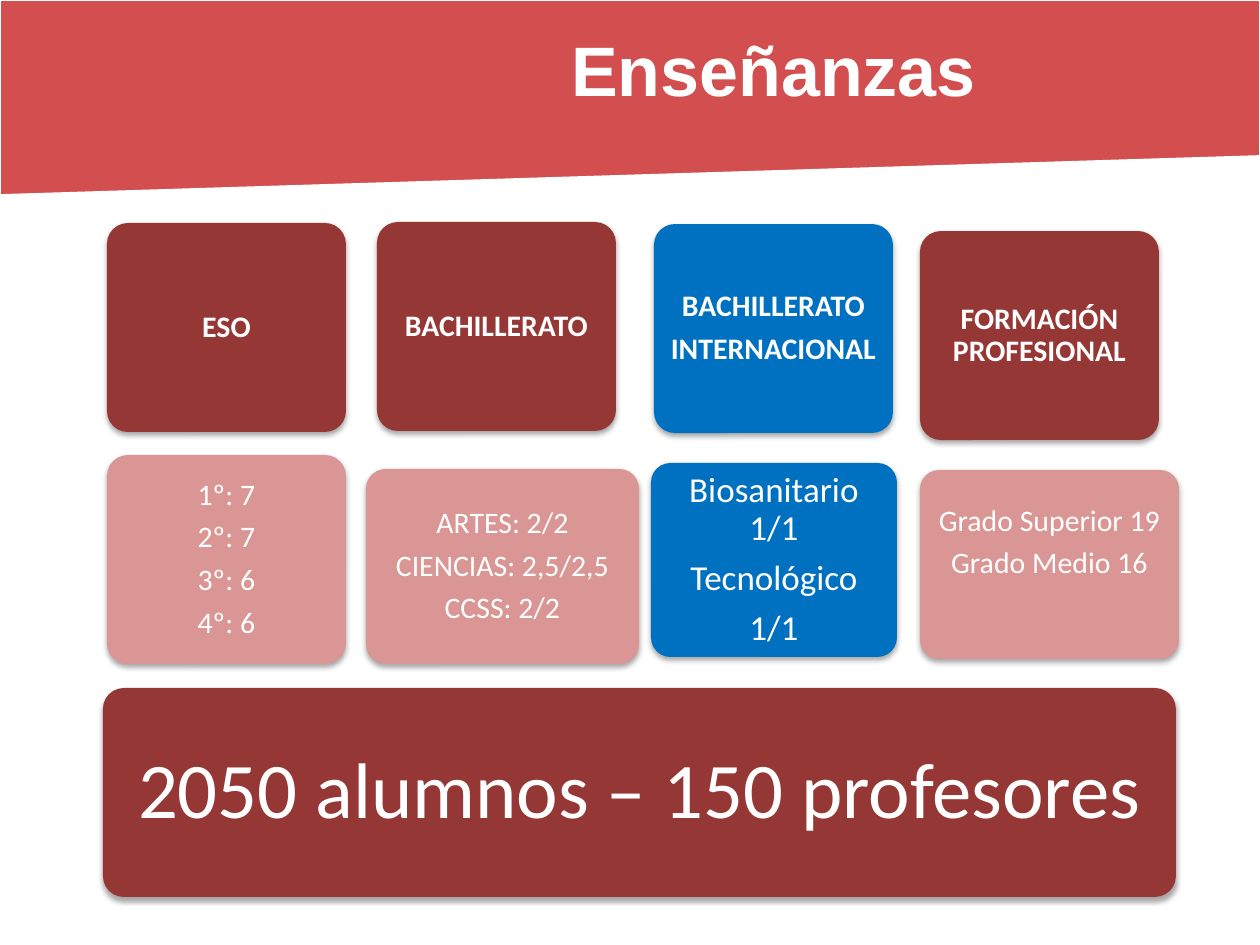
from lxml.etree import SubElement
from pptx import Presentation
from pptx.dml.color import RGBColor
from pptx.enum.shapes import MSO_SHAPE
from pptx.enum.text import MSO_ANCHOR, PP_ALIGN
from pptx.oxml.ns import qn
from pptx.util import Emu, Pt

SCALE = 914400 / 126
WHITE, DARK, PINK, BLUE = "FFFFFF", "953735", "D99694", "0070C0"


def px(n):
    return Emu(round(n * SCALE))


def paint(fill, color, alpha=None):
    fill.solid()
    fill.fore_color.rgb = RGBColor.from_string(color)


def fade(node, percent):
    SubElement(node, qn("a:alpha"), val=str(percent * 1000))


def shade(shape):
    shape.shadow.inherit = False
    effects = shape._element.spPr.find(qn("a:effectLst"))
    outer = SubElement(effects, qn("a:outerShdw"), blurRad="40000",
                       dist="23000", dir="5400000", rotWithShape="0")
    fade(SubElement(outer, qn("a:srgbClr"), val="000000"), 35)


def write(shape, lines, size, font, bold, pad, foot=0):
    frame = shape.text_frame
    frame.word_wrap = True
    frame.vertical_anchor = MSO_ANCHOR.MIDDLE
    frame.margin_left = frame.margin_right = frame.margin_top = px(pad)
    frame.margin_bottom = px(pad + foot)
    frame.text = "\n".join(lines)
    for para in frame.paragraphs:
        para.alignment = PP_ALIGN.CENTER
        para.line_spacing = 0.9
        para.space_after = Pt(round(size * 0.35))
        for run in para.runs:
            run.font.size = Pt(size)
            run.font.name = font
            run.font.bold = bold
            run.font.color.rgb = RGBColor.from_string(WHITE)


def header(slide, left, top, width, height):
    band = slide.shapes.add_shape(MSO_SHAPE.FLOWCHART_MANUAL_INPUT,
                                  px(left), px(top), px(width), px(height))
    band.rotation = 180
    band.shadow.inherit = False
    paint(band.fill, "C00000")
    fade(band._element.spPr.find(".//" + qn("a:srgbClr")), 69)
    paint(band.line.fill, WHITE)
    band.line.width = Pt(1)
    title = slide.shapes.add_textbox(px(left + 451), px(top), px(645), px(137))
    write(title, ["Enseñanzas"], 40, "Arial", True, 6)
    title.text_frame.paragraphs[0].space_after = Pt(0)
    title.text_frame.paragraphs[0].line_spacing = 1


def card(slide, box, color, lines, size=17, bold=False, pad=9, foot=0):
    shape = slide.shapes.add_shape(MSO_SHAPE.ROUNDED_RECTANGLE,
                                   *[px(n) for n in box])
    shape.adjustments[0] = 0.1
    paint(shape.fill, color)
    shape.line.fill.background()
    shade(shape)
    write(shape, lines, size, "Calibri", bold, pad, foot)


def stages(slide, left, top):
    for x, y, color, lines in [
        (0, 1, DARK, ["ESO"]),
        (270, 0, DARK, ["BACHILLERATO"]),
        (547, 2, BLUE, ["BACHILLERATO", "INTERNACIONAL"]),
        (813, 9, DARK, ["FORMACIÓN PROFESIONAL"]),
    ]:
        card(slide, (left + x, top + y, 239, 209), color, lines, bold=True)


def groups(slide, left, top):
    for x, y, wide, high, color, lines, style in [
        (0, 0, 239, 209, PINK, ["1º: 7", "2º: 7", "3º: 6", "4º: 6"], {}),
        (259, 14, 273, 195, PINK,
         ["ARTES: 2/2", "CIENCIAS: 2,5/2,5", "CCSS: 2/2"], {}),
        (544, 8, 246, 194, BLUE,
         ["Biosanitario 1/1", "Tecnológico", "1/1"], {"size": 20, "pad": 10}),
        (813, 15, 259, 189, PINK,
         ["Grado Superior 19", "Grado Medio 16"], {"foot": 43}),
    ]:
        card(slide, (left + x, top + y, wide, high), color, lines, **style)


def main():
    deck = Presentation()
    deck.slide_width, deck.slide_height = px(1260), px(945)
    slide = deck.slides.add_slide(deck.slide_layouts[6])
    header(slide, 0, 0, 1260, 195)
    stages(slide, 107, 222)
    groups(slide, 107, 455)
    card(slide, (103, 688, 1073, 209), DARK,
         ["2050 alumnos – 150 profesores"], size=45, pad=24)
    deck.save("out.pptx")


if __name__ == "__main__":
    main()
